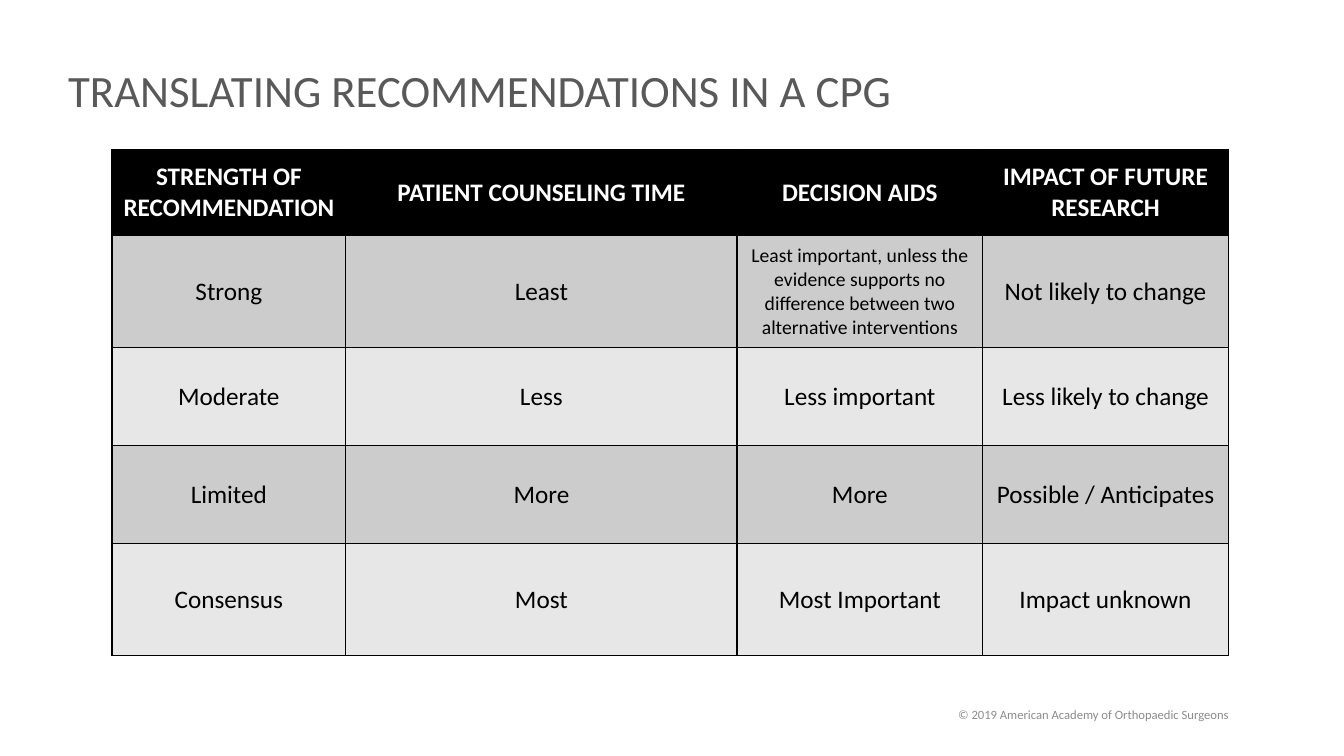
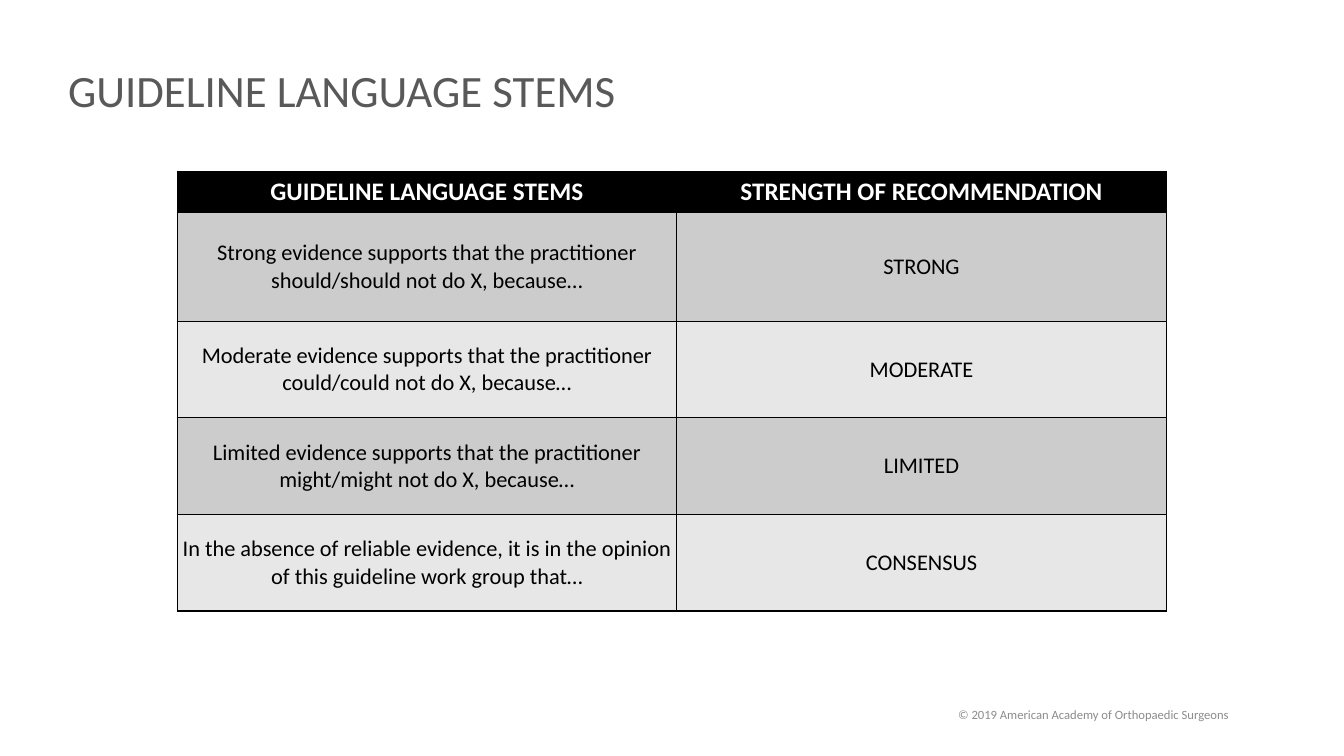
import dataclasses

import lxml.etree
import pptx
import pptx.dml.color
import pptx.enum.text
import pptx.oxml.ns
import pptx.util

Pt = pptx.util.Pt
ALIGN = pptx.enum.text.PP_ALIGN
MIDDLE = pptx.enum.text.MSO_ANCHOR.MIDDLE


@dataclasses.dataclass(frozen=True)
class Theme:
    font: str = "Calibri"
    title: str = "595959"
    footer: str = "8C8C8C"
    header_fill: str = "000000"
    header_text: str = "FFFFFF"
    body_text: str = "000000"
    border: str = "000000"
    bands: tuple = ("CCCCCC", "E7E7E7")
    title_size: int = 32
    header_size: int = 18
    footer_size: int = 9


THEME = Theme()
FOOTER = "© 2019 American Academy of Orthopaedic Surgeons"

tables = [
    dict(
        title="TRANSLATING RECOMMENDATIONS IN A CPG",
        left=80, top=106.5,
        widths=[167, 279.5, 175.5, 175.5],
        heights=[62, 80, 70, 70, 80],
        body_size=18,
        tight_columns=2,
        small_cells={(1, 2): 14},
        rows=[
            ["STRENGTH OF RECOMMENDATION", "PATIENT COUNSELING TIME",
             "DECISION AIDS", "IMPACT OF FUTURE RESEARCH"],
            ["Strong", "Least",
             "Least important, unless the evidence supports no difference "
             "between two alternative interventions",
             "Not likely to change"],
            ["Moderate", "Less", "Less important", "Less likely to change"],
            ["Limited", "More", "More", "Possible / Anticipates"],
            ["Consensus", "Most", "Most Important", "Impact unknown"],
        ],
    ),
    dict(
        title="GUIDELINE LANGUAGE STEMS",
        left=126.5, top=122.5,
        widths=[357, 349.5],
        heights=[29, 78, 69, 69, 69],
        body_size=16,
        tight_columns=2,
        small_cells={},
        rows=[
            ["GUIDELINE LANGUAGE STEMS", "STRENGTH OF RECOMMENDATION"],
            ["Strong evidence supports that the practitioner "
             "should/should not do X, because…", "STRONG"],
            ["Moderate evidence supports that the practitioner "
             "could/could not do X, because…", "MODERATE"],
            ["Limited evidence supports that the practitioner "
             "might/might not do X, because…", "LIMITED"],
            ["In the absence of reliable evidence, it is in the opinion "
             "of this guideline work group that…", "CONSENSUS"],
        ],
    ),
]


def write(tf, text, size, color, bold=False, align=ALIGN.CENTER, spacing=1.0):
    tf.word_wrap = True
    p = tf.paragraphs[0]
    p.alignment = align
    p.line_spacing = spacing
    r = p.add_run()
    r.text = text
    r.font.name = THEME.font
    r.font.size = Pt(size)
    r.font.bold = bold
    r.font.color.rgb = pptx.dml.color.RGBColor.from_string(color)


def style_cell(cell, fill):
    """Give a cell thin borders on all sides and a solid fill."""
    qn = pptx.oxml.ns.qn
    tcPr = cell._tc.get_or_add_tcPr()
    for side in ("lnL", "lnR", "lnT", "lnB"):
        ln = lxml.etree.SubElement(tcPr, qn(f"a:{side}"), w=str(Pt(1)))
        solid = lxml.etree.SubElement(ln, qn("a:solidFill"))
        lxml.etree.SubElement(solid, qn("a:srgbClr"), val=THEME.border)
    cell.fill.solid()
    cell.fill.fore_color.rgb = pptx.dml.color.RGBColor.from_string(fill)
    cell.vertical_anchor = MIDDLE


prs = pptx.Presentation()
prs.slide_width, prs.slide_height = Pt(960), Pt(540)
title_only = prs.slide_layouts[5]

for t in tables:
    s = prs.slides.add_slide(title_only)

    title = s.shapes.title
    title.left, title.top, title.width, title.height = Pt(41.5), Pt(39.5), Pt(876), Pt(54)
    title.text_frame.vertical_anchor = MIDDLE
    write(title.text_frame, t["title"], THEME.title_size, THEME.title,
          align=ALIGN.LEFT, spacing=0.9)

    footer = s.shapes.add_textbox(Pt(619), Pt(496), Pt(324), Pt(29))
    footer.text_frame.vertical_anchor = MIDDLE
    write(footer.text_frame, FOOTER, THEME.footer_size, THEME.footer)

    table = s.shapes.add_table(
        len(t["heights"]), len(t["widths"]), Pt(t["left"]), Pt(t["top"]),
        Pt(sum(t["widths"])), Pt(sum(t["heights"]))).table
    for column, width in zip(table.columns, t["widths"]):
        column.width = Pt(width)
    for row, height in zip(table.rows, t["heights"]):
        row.height = Pt(height)

    for i, texts in enumerate(t["rows"]):
        header = i == 0
        fill = THEME.header_fill if header else THEME.bands[(i - 1) % 2]
        color = THEME.header_text if header else THEME.body_text
        for j, text in enumerate(texts):
            cell = table.cell(i, j)
            style_cell(cell, fill)
            if not header and j < t["tight_columns"]:
                cell.margin_left = cell.margin_right = Pt(3.6)
            size = THEME.header_size if header else t["small_cells"].get((i, j), t["body_size"])
            write(cell.text_frame, text, size, color, bold=header)

prs.save("out.pptx")
